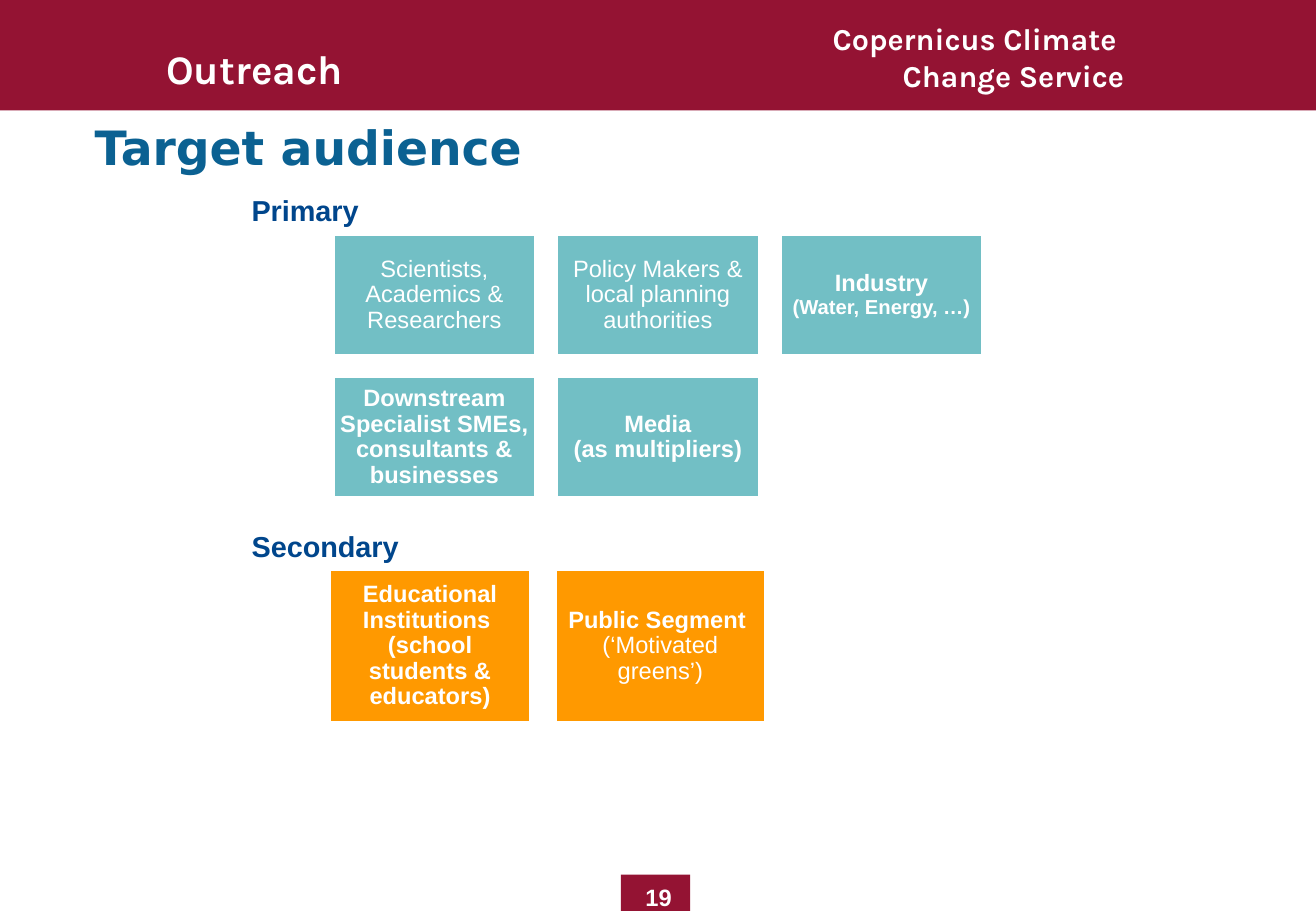
import copy
from dataclasses import dataclass

import pptx
import pptx.dml.color
import pptx.enum.shapes
import pptx.enum.text
import pptx.util

Inches = pptx.util.Inches
Pt = pptx.util.Pt
ALIGN = pptx.enum.text.PP_ALIGN
ANCHOR = pptx.enum.text.MSO_ANCHOR


@dataclass(frozen=True)
class Theme:
    crimson: str = "941333"
    teal: str = "72BFC5"
    orange: str = "FF9900"
    title_blue: str = "0B6192"
    label_blue: str = "00468C"
    white: str = "FFFFFF"
    body_font: str = "Arial"
    header_font: str = "Karla"
    title_font: str = "DejaVu Sans"
    title_size: float = 28
    section_size: float = 24
    service_size: float = 18
    label_size: float = 17.1
    body_size: float = 14
    small_size: float = 12


theme = Theme()
deck = pptx.Presentation()
deck.slide_width, deck.slide_height = Inches(10.83), Inches(7.5)
page = deck.slides.add_slide(deck.slide_layouts[6])


def add_rectangle(left, top, width, height, color):
    box = page.shapes.add_shape(
        pptx.enum.shapes.MSO_SHAPE.RECTANGLE,
        Inches(left), Inches(top), Inches(width), Inches(height))
    box.shadow.inherit = False
    box.fill.solid()
    box.fill.fore_color.rgb = pptx.dml.color.RGBColor.from_string(color)
    box.line.fill.background()
    return box


def write(box, lines, font=theme.body_font, color=theme.white, align=ALIGN.CENTER,
          anchor=ANCHOR.TOP, margins=None, wrap=True, spacing=None):
    """Fill a box with one paragraph; lines holds (text, size, bold) tuples."""
    frame = box.text_frame
    frame.word_wrap = wrap
    frame.vertical_anchor = anchor
    if margins is not None:
        frame.margin_left = frame.margin_right = Inches(margins)
        frame.margin_top = frame.margin_bottom = Inches(margins)
    para = frame.paragraphs[0]
    para.alignment = align
    para.line_spacing = spacing
    for index, (text, size, bold) in enumerate(lines):
        if index:
            # The line break takes the type of the run before it
            para.add_line_break()
            para._p[-1].append(copy.deepcopy(span._r.rPr))
        span = para.add_run()
        span.text = text
        span.font.name = font
        span.font.size = Pt(size)
        span.font.bold = bold
        span.font.color.rgb = pptx.dml.color.RGBColor.from_string(color)


# Header band and page number plate
add_rectangle(0, 0, 10.83, 0.91, theme.crimson)
add_rectangle(5.11, 7.2, 0.57, 0.3, theme.crimson)

# Free-standing texts: left, top, width, height, lines, formatting
header = {"font": theme.header_font}
label = {"color": theme.label_blue, "align": ALIGN.RIGHT, "wrap": False}
texts = [
    (6.67, 0.12, 2.68, 0.71,
     [("Copernicus Climate ", theme.service_size, True),
      ("Change Service", theme.service_size, True)],
     {**header, "align": ALIGN.RIGHT}),
    (0, 0.31, 4.19, 0.45, [("Outreach", theme.section_size, True)], header),
    (0.78, 1.09, 4.76, 0.39, [("Target audience", theme.title_size, True)],
     {"font": theme.title_font, "color": theme.title_blue, "align": ALIGN.LEFT,
      "anchor": ANCHOR.MIDDLE, "margins": 0, "spacing": Pt(22.8)}),
    (1.96, 1.54, 1.09, 0.39, [("Primary", theme.label_size, True)], label),
    (1.96, 4.3, 1.42, 0.39, [("Secondary", theme.label_size, True)], label),
    (4.46, 7.26, 1.92, 0.24, [("19", theme.body_size, True)],
     {"anchor": ANCHOR.BOTTOM, "margins": 0}),
]
for left, top, width, height, lines, style in texts:
    box = page.shapes.add_textbox(
        Inches(left), Inches(top), Inches(width), Inches(height))
    write(box, lines, **style)

# Audience cards
size = theme.body_size
primary = [
    [("Scientists, Academics & Researchers", size, False)],
    [("Policy Makers & local planning authorities", size, False)],
    [("Industry", size, True), ("(Water, Energy, …)", theme.small_size, True)],
    [("Downstream Specialist SMEs, consultants & businesses", size, True)],
    [("Media", size, True), ("(as multipliers)", size, True)],
]
cards = [
    (2.74 + 1.84 * (index % 3), 1.93 + 1.17 * (index // 3), 1.67, 1, theme.teal, lines)
    for index, lines in enumerate(primary)
]
cards += [
    (2.71, 4.69, 1.66, 1.26, theme.orange,
     [("Educational Institutions ", size, True),
      ("(school students & educators)", size, True)]),
    (4.57, 4.69, 1.73, 1.26, theme.orange,
     [("Public Segment ", size, True), ("(‘Motivated greens’)", size, False)]),
]
for left, top, width, height, color, lines in cards:
    card = add_rectangle(left, top, width, height, color)
    card.line.color.rgb = pptx.dml.color.RGBColor.from_string(theme.white)
    card.line.width = Pt(2)
    write(card, lines, anchor=ANCHOR.MIDDLE, margins=0.06, spacing=0.9)

deck.save("out.pptx")
